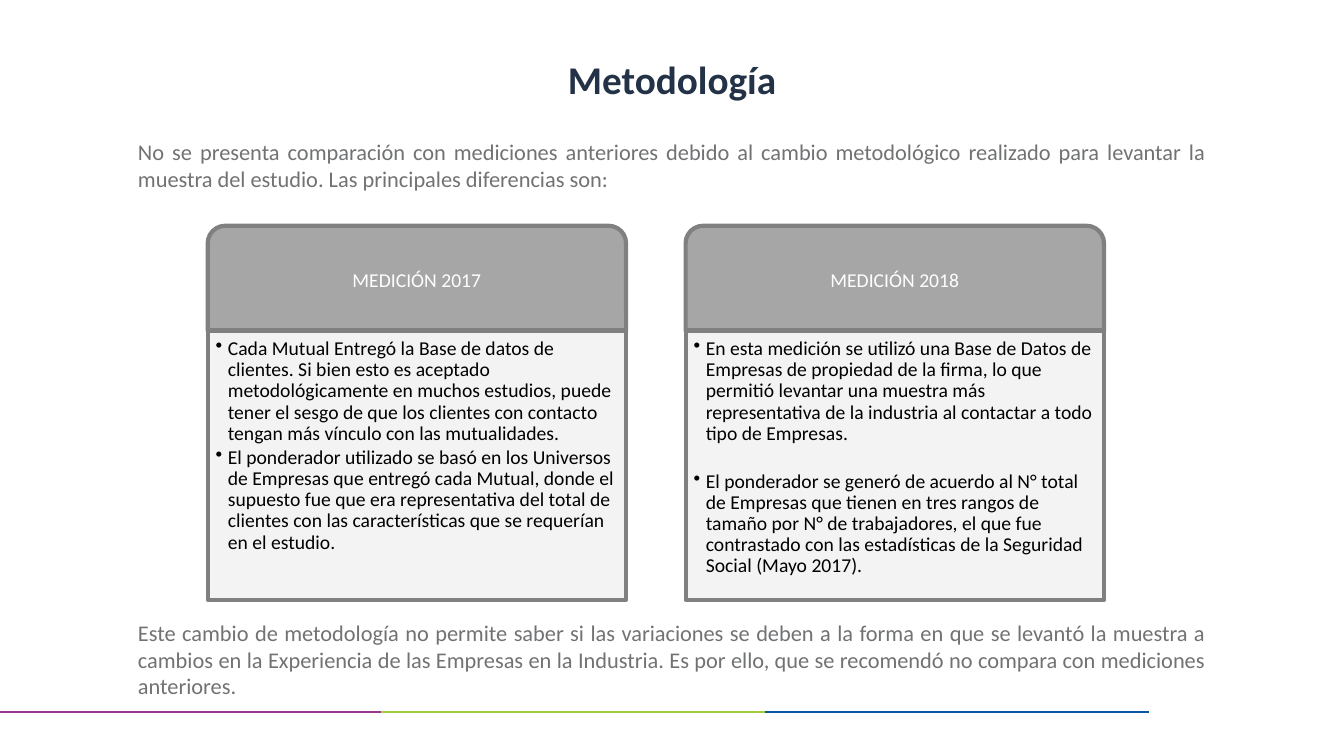
from lxml.etree import SubElement
from pptx import Presentation
from pptx.dml.color import RGBColor
from pptx.enum.shapes import MSO_CONNECTOR, MSO_SHAPE
from pptx.enum.text import MSO_ANCHOR, PP_ALIGN
from pptx.oxml.ns import qn
from pptx.util import Inches, Pt

TITLE = "Metodología"
NOTES = [  # top, height, text
    (1.32, 0.91, "No se presenta comparación con mediciones anteriores debido al cambio "
     "metodológico realizado para levantar la muestra del estudio. Las principales "
     "diferencias son:"),
    (6.09, 1.18, "Este cambio de metodología no permite saber si las variaciones se deben a "
     "la forma en que se levantó la muestra a cambios en la Experiencia de las Empresas en "
     "la Industria. Es por ello, que se recomendó no compara con mediciones anteriores."),
]
CARDS = [  # heading, points between bullets, bullets
    ("MEDICIÓN 2017", 2, [
        "Cada Mutual Entregó la Base de datos de clientes. Si bien esto es aceptado "
        "metodológicamente en muchos estudios, puede tener el sesgo de que los clientes con "
        "contacto tengan más vínculo con las mutualidades.",
        "El ponderador utilizado se basó en los Universos de Empresas que entregó cada "
        "Mutual, donde el supuesto fue que era representativa del total de clientes con las "
        "características que se requerían en el estudio."]),
    ("MEDICIÓN 2018", 19, [
        "En esta medición se utilizó una Base de Datos de Empresas de propiedad de la firma, lo "
        "que permitió levantar una muestra más representativa de la industria al contactar a "
        "todo tipo de Empresas.",
        "El ponderador se generó de acuerdo al N° total de Empresas que tienen en tres rangos "
        "de tamaño por N° de trabajadores, el que fue contrastado con las estadísticas de la "
        "Seguridad Social (Mayo 2017)."]),
]
FOOTER_LINES = [(0, "963791"), (3.78, "A2CD3A"), (7.59, "0B56A4")]  # left, colour
FOOTER_TOP, FOOTER_LENGTH = 7.06, 3.81
TEXT_LEFT, TEXT_WIDTH = 1.27, 10.79
CARD_LEFT, CARD_STEP, CARD_WIDTH = 2.06, 4.74, 4.15
HEAD_TOP, HEAD_HEIGHT, BODY_HEIGHT = 2.24, 1.04, 2.67


def color(value):
    return RGBColor.from_string(value)


def set_frame(frame, anchor, margins=(0.1, 0.05, 0.1, 0.05)):
    frame.word_wrap = True
    frame.vertical_anchor = anchor
    (frame.margin_left, frame.margin_top,
     frame.margin_right, frame.margin_bottom) = map(Inches, margins)


def write(para, text, size, hue, align, spacing=1.0, bold=False):
    para.alignment = align
    para.line_spacing = spacing
    span = para.add_run()
    span.text = text
    span.font.name = "Calibri"
    span.font.size = Pt(size)
    span.font.bold = bold
    span.font.color.rgb = color(hue)


def add_bullet(para):
    props = para._p.get_or_add_pPr()
    props.set("marL", str(Inches(0.12)))
    props.set("indent", str(-Inches(0.12)))
    SubElement(props, qn("a:buChar")).set("char", "•")


def add_panel(page, kind, left, top, height, fill):
    panel = page.shapes.add_shape(kind, Inches(left), Inches(top),
                                  Inches(CARD_WIDTH), Inches(height))
    panel.shadow.inherit = False
    panel.fill.solid()
    panel.fill.fore_color.rgb = color(fill)
    panel.line.color.rgb = color("808080")
    panel.line.width = Pt(3)
    return panel


def add_card(page, left, heading, gap, bullets):
    head = add_panel(page, MSO_SHAPE.ROUND_2_SAME_RECTANGLE, left, HEAD_TOP,
                     HEAD_HEIGHT, "A6A6A6")
    set_frame(head.text_frame, MSO_ANCHOR.MIDDLE, (0.11, 0.06, 0.11, 0.06))
    write(head.text_frame.paragraphs[0], heading, 14, "FFFFFF", PP_ALIGN.CENTER, 0.9)

    body = add_panel(page, MSO_SHAPE.RECTANGLE, left, HEAD_TOP + HEAD_HEIGHT,
                     BODY_HEIGHT, "F2F2F2")
    fill_hue = body.fill._xPr.find(qn("a:solidFill"))[0]
    SubElement(fill_hue, qn("a:alpha")).set("val", "90000")
    frame = body.text_frame
    set_frame(frame, MSO_ANCHOR.TOP, (0.08, 0.08, 0.11, 0.12))
    for index, bullet in enumerate(bullets):
        para = frame.add_paragraph() if index else frame.paragraphs[0]
        add_bullet(para)
        para.space_before = Pt(gap if index else 0)
        write(para, bullet, 14, "000000", PP_ALIGN.LEFT, 0.9)


def main():
    deck = Presentation()
    deck.slide_width, deck.slide_height = Inches(13.33), Inches(7.5)
    page = deck.slides.add_slide(deck.slide_layouts[5])

    # Footer stripe
    for left, hue in FOOTER_LINES:
        stripe = page.shapes.add_connector(
            MSO_CONNECTOR.STRAIGHT, Inches(left), Inches(FOOTER_TOP),
            Inches(left + FOOTER_LENGTH), Inches(FOOTER_TOP))
        stripe.line.color.rgb = color(hue)
        stripe.line.width = Pt(1.5)
        SubElement(stripe._element.spPr, qn("a:effectLst"))

    # Title
    title = page.shapes.title
    title.left, title.top = Inches(TEXT_LEFT), Inches(0.47)
    title.width, title.height = Inches(TEXT_WIDTH), Inches(0.69)
    set_frame(title.text_frame, MSO_ANCHOR.MIDDLE)
    write(title.text_frame.paragraphs[0], TITLE, 28, "233247", PP_ALIGN.CENTER, 0.9, True)

    # Introduction and conclusion
    for top, height, text in NOTES:
        box = page.shapes.add_textbox(Inches(TEXT_LEFT), Inches(top),
                                      Inches(TEXT_WIDTH), Inches(height))
        set_frame(box.text_frame, MSO_ANCHOR.TOP)
        write(box.text_frame.paragraphs[0], text, 16, "717274", PP_ALIGN.JUSTIFY)

    # Comparison cards
    for index, card in enumerate(CARDS):
        add_card(page, CARD_LEFT + index * CARD_STEP, *card)

    deck.save("out.pptx")


if __name__ == "__main__":
    main()
